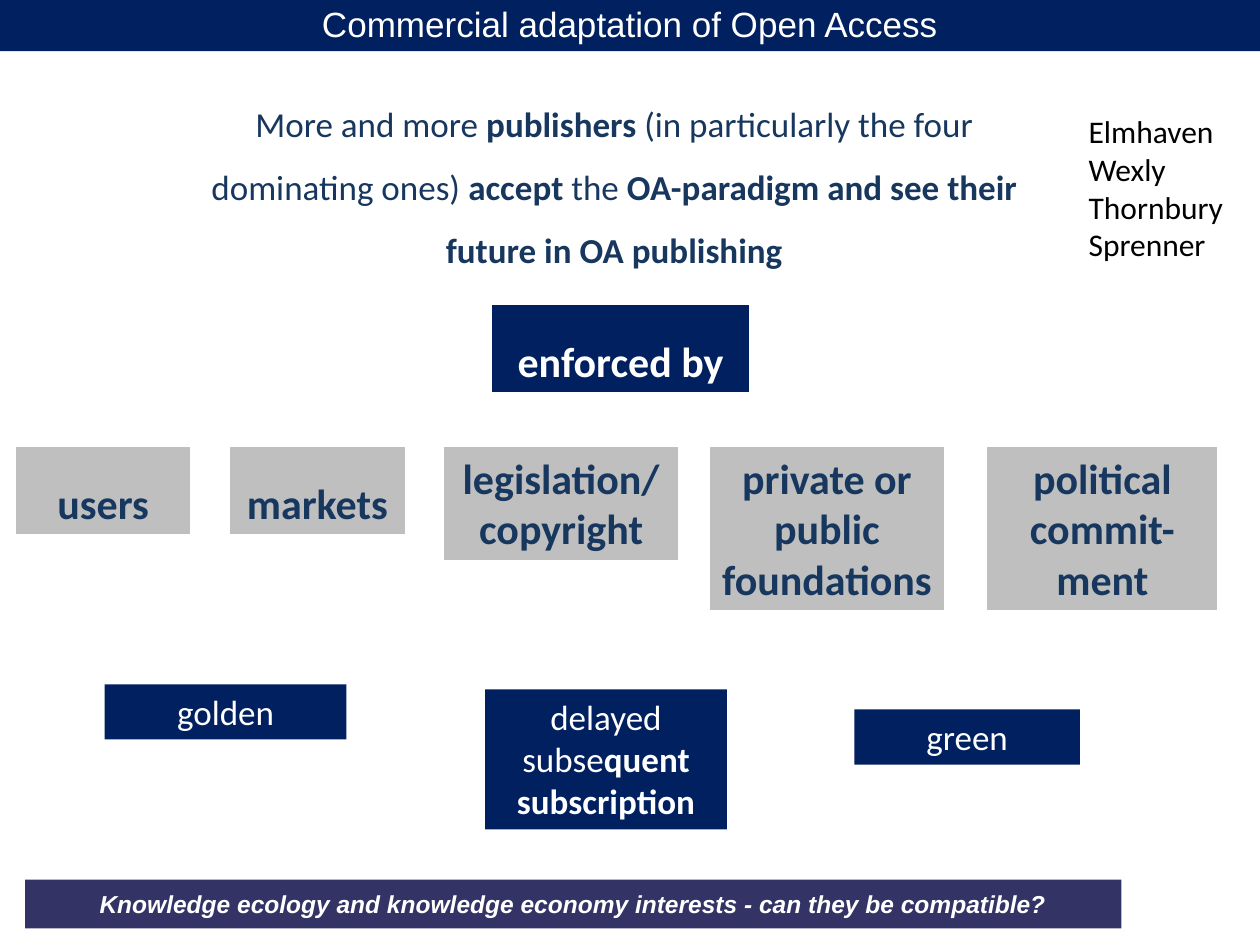
from pptx import Presentation
from pptx.dml.color import RGBColor
from pptx.enum.shapes import MSO_SHAPE
from pptx.enum.text import MSO_ANCHOR, PP_ALIGN
from pptx.util import Pt

NAVY, INDIGO, INK = "002060", "333366", "17375E"
GREY, WHITE, BLACK = "BFBFBF", "FFFFFF", "000000"


def rgb(value):
    return RGBColor.from_string(value)


def add_runs(p, runs, size, color, font="Calibri", italic=False):
    """Add (text, bold) pairs to a paragraph."""
    for text, bold in runs:
        r = p.add_run()
        r.text = text
        r.font.name, r.font.size = font, Pt(size)
        r.font.bold, r.font.italic = bold, italic
        r.font.color.rgb = rgb(color)


def add_box(s, box, runs, fill, color, size, line=None, spacing=None,
            anchor=MSO_ANCHOR.TOP, **style):
    """Add a filled rectangle with one centred paragraph."""
    sp = s.shapes.add_shape(MSO_SHAPE.RECTANGLE, *map(Pt, box))
    sp.shadow.inherit = False
    sp.fill.solid()
    sp.fill.fore_color.rgb = rgb(fill)
    if line:
        sp.line.color.rgb = rgb(line)
        sp.line.width = Pt(1)
    else:
        sp.line.fill.background()
    tf = sp.text_frame
    tf.word_wrap = True
    tf.vertical_anchor = anchor
    p = tf.paragraphs[0]
    p.alignment = PP_ALIGN.CENTER
    if spacing:
        p.line_spacing = spacing
    add_runs(p, runs, size, color, **style)


def add_title(s, box):
    add_box(s, box, [("Commercial adaptation of Open Access", False)],
            NAVY, WHITE, 20, font="Arial")


def add_statement(s, box):
    runs = [
        ("More and more ", False),
        ("publishers", True),
        (" (in particularly the four dominating ones) ", False),
        ("accept", True),
        (" the ", False),
        ("OA-paradigm and see their future in OA publishing", True),
    ]
    add_box(s, box, runs, WHITE, INK, 20, line=WHITE, spacing=1.5)


def add_publishers(s, box):
    tf = s.shapes.add_textbox(*map(Pt, box)).text_frame
    tf.word_wrap = True
    for i, name in enumerate(["Elmhaven", "Wexly", "Thornbury", "Sprenner"]):
        p = tf.paragraphs[0] if i == 0 else tf.add_paragraph()
        add_runs(p, [(name, False)], 18, BLACK)


def add_enforced_by(s, box):
    add_box(s, box, [("enforced by", True)], NAVY, WHITE, 24,
            line=WHITE, spacing=1.5)


def add_forces(s, box):
    left, top = box
    # Offset from the left, width, height, line spacing, label
    forces = [
        (0, 100.8, 51, 1.5, "users"),
        (122.4, 100.8, 51, 1.5, "markets"),
        (244.8, 134.6, 65.5, None, "legislation/ copyright"),
        (396.7, 134.6, 94.5, None, "private or public foundations"),
        (555.1, 132.5, 94.5, None, "political commit-ment"),
    ]
    for dx, width, height, spacing, label in forces:
        add_box(s, (left + dx, top, width, height), [(label, True)],
                GREY, INK, 24, line=WHITE, spacing=spacing)


def add_model(s, box, runs):
    add_box(s, box, runs, NAVY, WHITE, 20)


def add_footer(s, box):
    text = "Knowledge ecology and knowledge economy interests - can they be compatible?"
    add_box(s, box, [(text, True)], INDIGO, WHITE, 14,
            anchor=MSO_ANCHOR.MIDDLE, font="Arial", italic=True)


def main():
    prs = Presentation()
    prs.slide_width, prs.slide_height = Pt(720), Pt(540)
    s = prs.slides.add_slide(prs.slide_layouts[6])

    # Footer and title bars
    add_footer(s, (14.4, 502.6, 626.4, 28))
    add_title(s, (0, -2.2, 720, 31.5))

    # Statement with the publishers beside it
    add_statement(s, (105, 43.2, 492, 116.6))
    add_publishers(s, (615, 60.5, 105, 94.5))

    # Forces behind the change
    add_enforced_by(s, (280.8, 173.5, 147.6, 51))
    add_forces(s, (8.6, 254.9))

    # Open access models
    add_model(s, (59.8, 391, 138.2, 31.5), [("golden", False)])
    add_model(s, (277.2, 394, 138.2, 80),
              [("delayed subse", False), ("quent subscription", True)])
    add_model(s, (488.2, 405.4, 128.9, 31.5), [("green", False)])

    prs.save("out.pptx")


if __name__ == "__main__":
    main()
